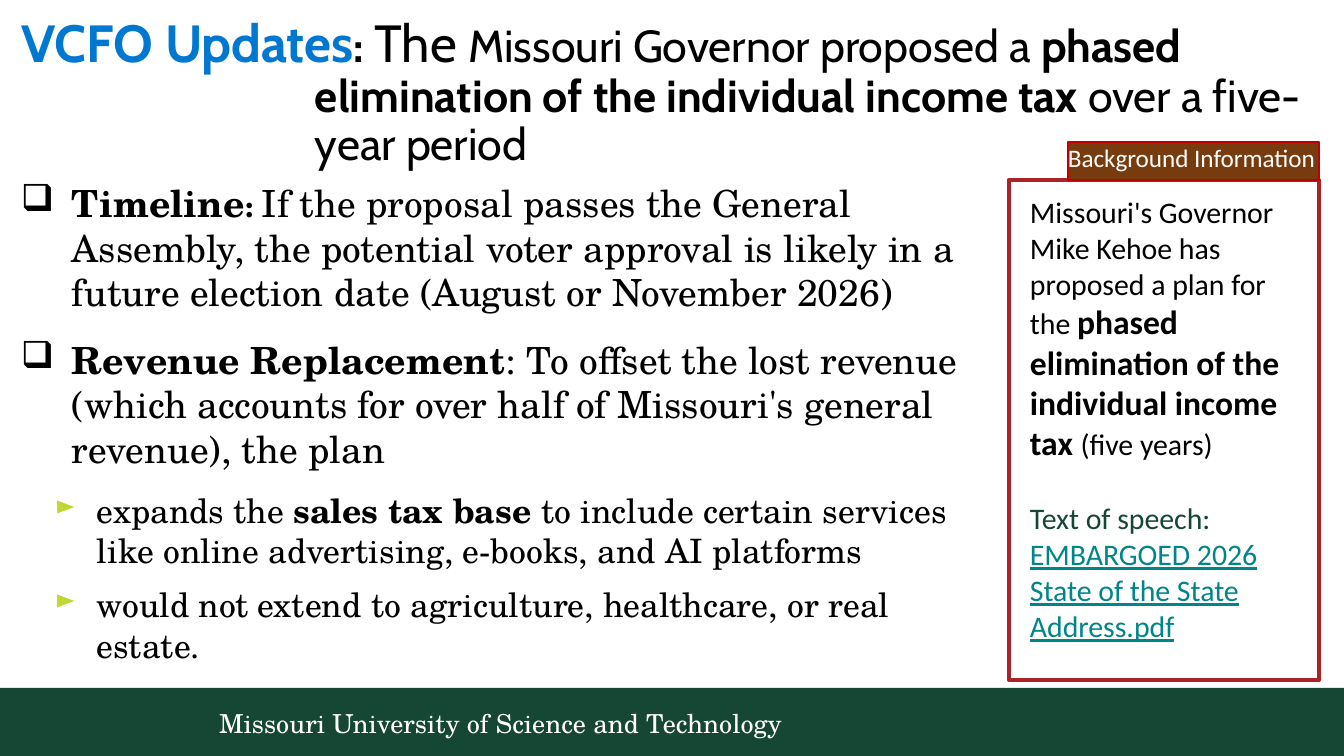
import pptx
import pptx.dml.color
import pptx.enum.shapes
import pptx.enum.text
import pptx.oxml.ns
import pptx.util
from dataclasses import dataclass
from lxml import etree

EMU_PER_PX = 914400 / 134.4


@dataclass(frozen=True)
class Theme:
    black: str = "000000"
    white: str = "FFFFFF"
    green: str = "154734"
    lime: str = "BFD730"
    blue: str = "0077D0"
    red: str = "AB2328"
    bright_red: str = "C00000"
    brown: str = "783B0D"
    teal: str = "00858A"
    title_large: float = 28
    title: float = 24
    body: float = 20
    colon: float = 16
    sub_body: float = 18
    side: float = 16
    side_strong: float = 18
    label: float = 13.5
    footer: float = 14
    heading_font: str = "Cabin"
    serif_font: str = "TeX Gyre Schola"
    side_font: str = "Calibri"


theme = Theme()


def px(*lengths):
    """Turn px lengths into a list of EMU lengths."""
    return [pptx.util.Emu(round(length * EMU_PER_PX)) for length in lengths]


def add_runs(paragraph, font_name, runs):
    """Add (text, size, colour, styles) runs; styles holds b for bold, u for underline."""
    for text, size, color, styles in runs:
        run = paragraph.add_run()
        run.text = text
        run.font.name = font_name
        run.font.size = pptx.util.Pt(size)
        run.font.color.rgb = pptx.dml.color.RGBColor.from_string(color)
        run.font.bold = "b" in styles
        run.font.underline = "u" in styles


presentation = pptx.Presentation()
presentation.slide_width, presentation.slide_height = px(1344, 756)
slide = presentation.slides.add_slide(presentation.slide_layouts[5])

# Rectangles: position, fill, line colour, line width
rectangles = [
    ((-5, 688, 1349, 68), theme.green, None, 0),
    ((1009, 180, 310, 500), None, theme.red, 2.25),
    ((1068, 142, 251, 38), theme.brown, theme.bright_red, 0.75),
]
for box, fill, line, width in rectangles:
    rectangle = slide.shapes.add_shape(pptx.enum.shapes.MSO_SHAPE.RECTANGLE, *px(*box))
    rectangle.shadow.inherit = False
    if fill:
        rectangle.fill.solid()
        rectangle.fill.fore_color.rgb = pptx.dml.color.RGBColor.from_string(fill)
    else:
        rectangle.fill.background()
    if line:
        rectangle.line.color.rgb = pptx.dml.color.RGBColor.from_string(line)
        rectangle.line.width = pptx.util.Pt(width)
    else:
        rectangle.line.fill.background()
label = rectangle

# Title
title = slide.shapes.title
title.left, title.top, title.width, title.height = px(21, 17, 1323, 104)

# Text boxes
body = slide.shapes.add_textbox(*px(21, 180, 948, 496))
footer = slide.shapes.add_textbox(*px(206, 696, 853, 54))
summary = slide.shapes.add_textbox(*px(1017, 187, 292, 285))
speech = slide.shapes.add_textbox(*px(1017, 493, 272, 195))

# Insets: left, top, right, bottom
insets = [
    (title, (0, 0, 0, 0)),
    (body, (0, 0, 0, 0)),
    (label, (0, 0, 0, 7)),
    (footer, (13, 7, 13, 7)),
    (summary, (13, 7, 13, 7)),
    (speech, (13, 7, 13, 7)),
]
for shape, margins in insets:
    frame = shape.text_frame
    frame.word_wrap = True
    frame.auto_size = pptx.enum.text.MSO_AUTO_SIZE.NONE
    frame.vertical_anchor = pptx.enum.text.MSO_ANCHOR.TOP
    frame.margin_left, frame.margin_top, frame.margin_right, frame.margin_bottom = px(*margins)
    frame.paragraphs[0].alignment = pptx.enum.text.PP_ALIGN.LEFT
footer.text_frame.vertical_anchor = pptx.enum.text.MSO_ANCHOR.MIDDLE

heading = title.text_frame.paragraphs[0]
heading.line_spacing = 0.9
hanging = px(294)[0]
heading_properties = heading._p.get_or_add_pPr()
heading_properties.set("marL", str(hanging))
heading_properties.set("indent", str(-hanging))
add_runs(heading, theme.heading_font, [
    ("VCFO Updates", theme.title_large, theme.blue, "b"),
    (": ", theme.title, theme.black, "b"),
    ("The ", theme.title_large, theme.black, ""),
    ("Missouri Governor proposed a ", theme.title, theme.black, ""),
    ("phased elimination of the individual income tax ", theme.title, theme.black, "b"),
    ("over a five-year period", theme.title, theme.black, ""),
])

# Bulleted paragraphs: level, space before, space after, runs
bullets = [
    (0, 0, 12, [
        ("Timeline", theme.body, theme.black, "b"),
        (": ", theme.colon, theme.black, "b"),
        ("If the proposal passes the General Assembly, the potential voter approval is likely "
         "in a future election date (August or November 2026)", theme.body, theme.black, ""),
    ]),
    (0, 0, 6, [
        ("Revenue Replacement", theme.body, theme.black, "b"),
        (": To offset the lost revenue (which accounts for over half of Missouri's general "
         "revenue), the plan", theme.body, theme.black, ""),
    ]),
    (1, 3.8, 3.8, [
        ("expands the ", theme.sub_body, theme.black, ""),
        ("sales tax base ", theme.sub_body, theme.black, "b"),
        ("to include certain services like online advertising, e-books, and AI platforms",
         theme.sub_body, theme.black, ""),
    ]),
    (1, 3.8, 3.8, [
        ("would not extend to agriculture, healthcare, or real estate.",
         theme.sub_body, theme.black, ""),
    ]),
]
# Per level: left margin and hanging indent in px, mark, colour, size in percent
bullet_styles = [(51, 51, "❑", theme.black, 100), (76, 42, "►", theme.lime, 80)]
for index, (level, before, after, runs) in enumerate(bullets):
    frame = body.text_frame
    paragraph = frame.add_paragraph() if index else frame.paragraphs[0]
    margin, indent, mark, color, percent = bullet_styles[level]
    margin, indent = px(margin, indent)
    paragraph.level = level
    properties = paragraph._p.get_or_add_pPr()
    properties.set("marL", str(margin))
    properties.set("indent", str(-indent))
    bullet_color = etree.SubElement(properties, pptx.oxml.ns.qn("a:buClr"))
    etree.SubElement(bullet_color, pptx.oxml.ns.qn("a:srgbClr"), val=color)
    etree.SubElement(properties, pptx.oxml.ns.qn("a:buSzPct"), val=str(percent * 1000))
    etree.SubElement(properties, pptx.oxml.ns.qn("a:buChar"), char=mark)
    paragraph.space_before = pptx.util.Pt(before)
    paragraph.space_after = pptx.util.Pt(after)
    add_runs(paragraph, theme.serif_font, runs)

# Single-paragraph texts
single_texts = [
    (label, theme.side_font, [("Background Information", theme.label, theme.white, "")]),
    (footer, theme.serif_font, [
        ("Missouri University of Science and Technology", theme.footer, theme.white, ""),
    ]),
    (summary, theme.side_font, [
        ("Missouri's Governor Mike Kehoe has proposed a plan for the ",
         theme.side, theme.black, ""),
        ("phased elimination of the individual income tax ",
         theme.side_strong, theme.black, "b"),
        ("(five years)", theme.side, theme.black, ""),
    ]),
    (speech, theme.side_font, [
        ("Text of speech: ", theme.side, theme.green, ""),
        ("EMBARGOED 2026 State of the State Address.pdf", theme.side, theme.teal, "u"),
    ]),
]
for shape, font_name, runs in single_texts:
    add_runs(shape.text_frame.paragraphs[0], font_name, runs)

presentation.save("out.pptx")
